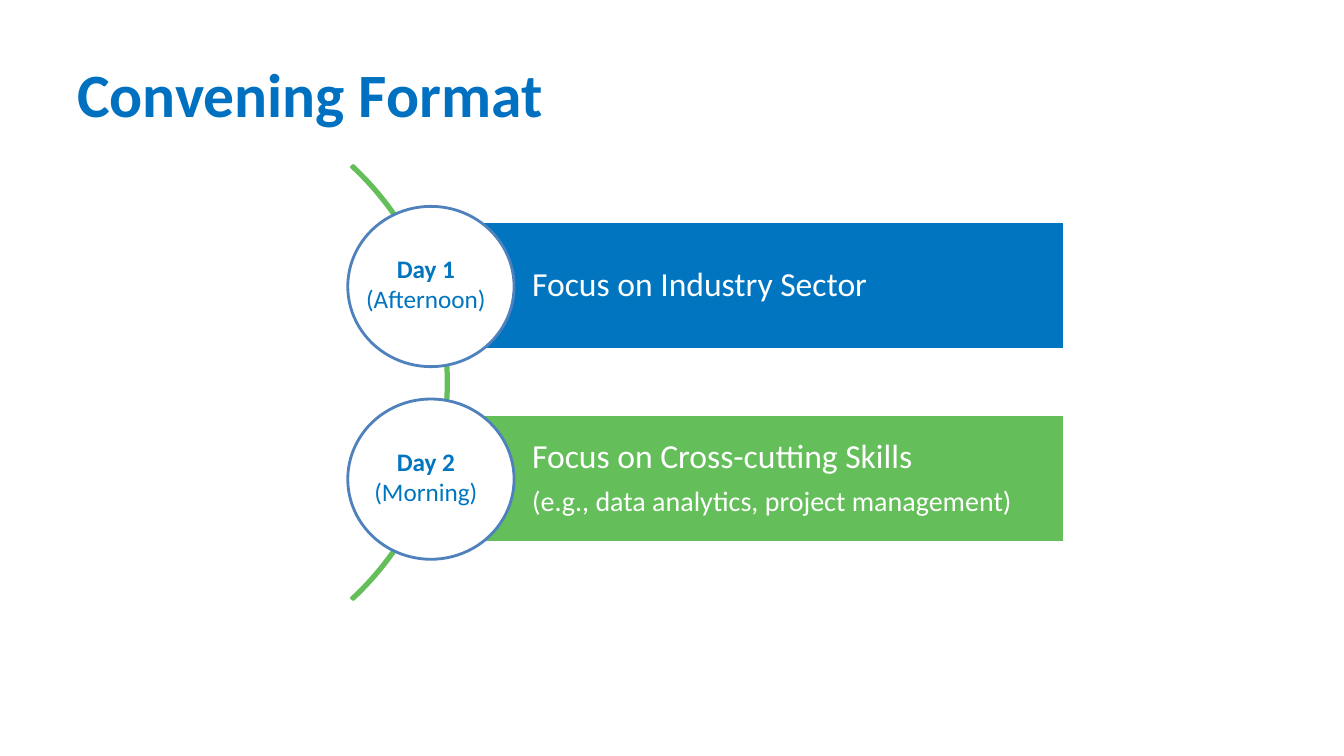
from pptx import Presentation
from pptx.dml.color import RGBColor
from pptx.enum import shapes, text
from pptx.util import Pt

COLORS = {"title": "0070C0", "blue": "0175C0", "green": "64BE5A",
          "outline": "4F81BD", "white": "FFFFFF"}
DAY_PITCH = 137.6
DAYS = [
    ("blue", [("Day 1", True), ("(Afternoon)", False)],
     [("Focus on Industry Sector", 24)]),
    ("green", [("Day 2", True), ("(Morning)", False)],
     [("Focus on Cross-cutting Skills", 24),
      ("(e.g., data analytics, project management)", 20)]),
]


def color(name):
    return RGBColor.from_string(COLORS[name])


def apply(target, values):
    for name, value in values.items():
        setattr(target, name, value)


def place(shape, left, top, width, height):
    apply(shape, {"left": Pt(left), "top": Pt(top),
                  "width": Pt(width), "height": Pt(height)})


def add_span(para, words, size, tint, bold=False):
    span = para.add_run()
    span.text = words
    apply(span.font, {"name": "Calibri", "size": Pt(size), "bold": bold})
    span.font.color.rgb = color(tint)


def paragraphs(frame, count):
    """Return the frame's first paragraph and as many new ones as needed."""
    return [frame.paragraphs[0]] + [frame.add_paragraph()
                                    for _ in range(count - 1)]


def add_outlined(page, kind, bounds, line, fill=None):
    shape = page.shapes.add_shape(kind, *map(Pt, bounds))
    shape.shadow.inherit = False
    if fill:
        shape.fill.solid()
        shape.fill.fore_color.rgb = color(fill)
    else:
        shape.fill.background()
    shape.line.color.rgb = color(line)
    shape.line.width = Pt(2)
    return shape


def add_title(page, words):
    title = page.shapes.title
    place(title, 48, 21.6, 864, 90)
    title.text_frame.vertical_anchor = text.MSO_ANCHOR.MIDDLE
    para = title.text_frame.paragraphs[0]
    para.alignment = text.PP_ALIGN.LEFT
    add_span(para, words, 44, "title", bold=True)


def add_arc(page):
    arc = add_outlined(page, shapes.MSO_SHAPE.BLOCK_ARC,
                       (-126, 57.6, 446.4, 431.3), "green")
    for index, value in enumerate((189, 27, 0.004)):
        arc.adjustments[index] = value


def add_bar(page, top, fill, lines):
    bar = add_outlined(page, shapes.MSO_SHAPE.RECTANGLE,
                       (307.4, top, 452.9, 91.4), "white", fill)
    frame = bar.text_frame
    apply(frame, {"word_wrap": True, "vertical_anchor": text.MSO_ANCHOR.MIDDLE,
                  "margin_left": Pt(72.7), "margin_right": Pt(5),
                  "margin_top": Pt(5), "margin_bottom": Pt(5)})
    for para, (words, size) in zip(paragraphs(frame, len(lines)), lines):
        apply(para, {"alignment": text.PP_ALIGN.LEFT, "line_spacing": 0.9,
                     "space_after": Pt(size * 0.35)})
        add_span(para, words, size, "white")


def add_day_label(page, top, lines):
    box = page.shapes.add_textbox(Pt(234), Pt(top), Pt(140.4), Pt(41.8))
    box.text_frame.word_wrap = False
    for para, (words, bold) in zip(paragraphs(box.text_frame, len(lines)), lines):
        para.alignment = text.PP_ALIGN.CENTER
        add_span(para, words, 18, "blue", bold)


def main():
    deck = Presentation()
    apply(deck, {"slide_width": Pt(960), "slide_height": Pt(540)})
    page = deck.slides.add_slide(deck.slide_layouts[5])
    add_title(page, "Convening Format")

    # Curve behind the days
    add_arc(page)

    # One bar, circle and label per day
    for index, (fill, label, focus) in enumerate(DAYS):
        shift = index * DAY_PITCH
        add_bar(page, 158.4 + shift, fill, focus)
        add_outlined(page, shapes.MSO_SHAPE.OVAL,
                     (248.4, 147.4 + shift, 118.8, 114.5), "outline", "white")
        add_day_label(page, 177.3 + shift, label)

    deck.save("out.pptx")


if __name__ == "__main__":
    main()
